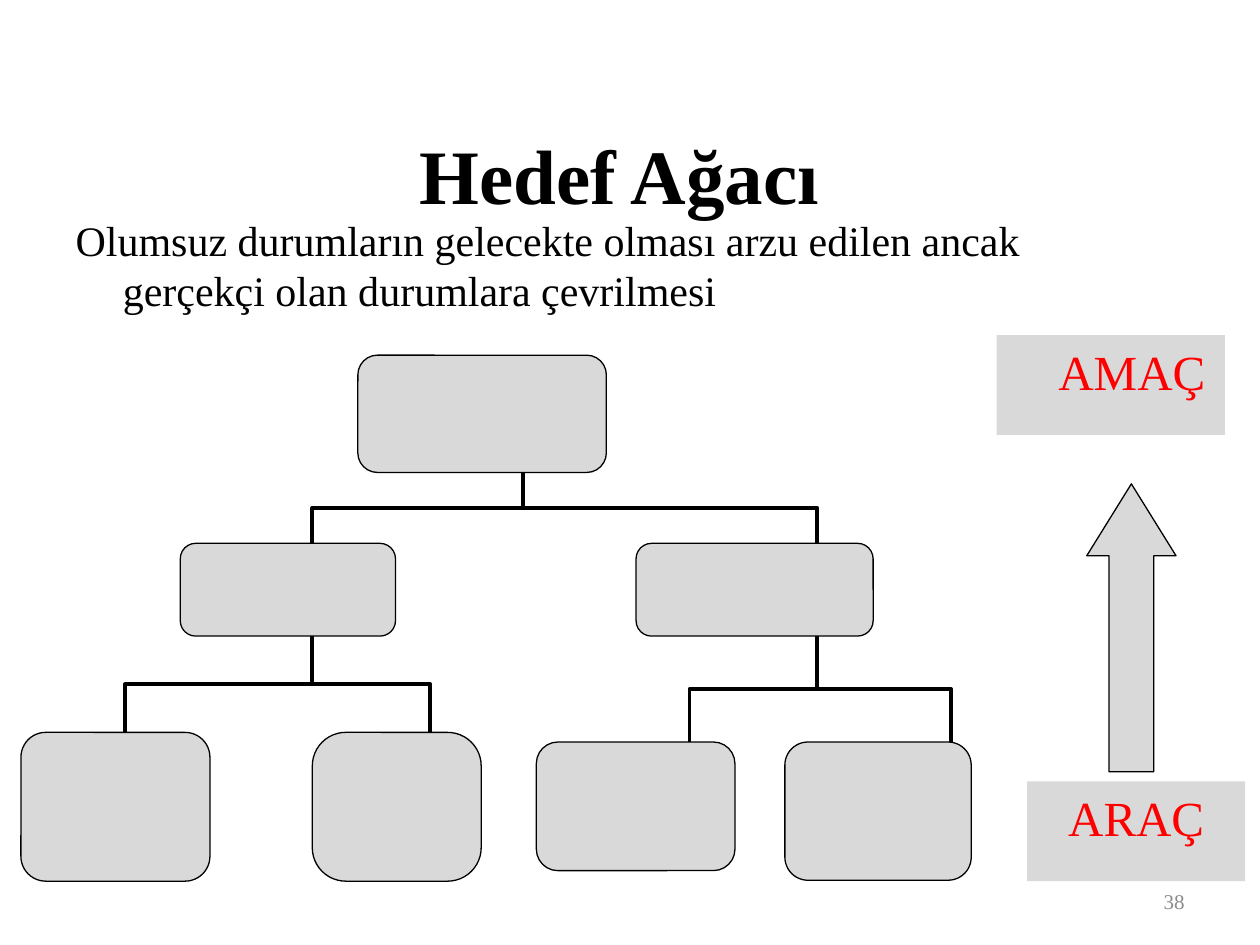
"""Build the goal tree slide with its means-to-end arrow."""
from dataclasses import dataclass

from lxml import etree
from pptx import Presentation
from pptx.dml.color import RGBColor
from pptx.enum.shapes import MSO_CONNECTOR, MSO_SHAPE
from pptx.enum.text import MSO_ANCHOR, PP_ALIGN
from pptx.oxml.ns import qn
from pptx.util import Pt

ROUNDED = MSO_SHAPE.ROUNDED_RECTANGLE
ALTERNATE = MSO_SHAPE.FLOWCHART_ALTERNATE_PROCESS
RECTANGLE = MSO_SHAPE.RECTANGLE
UP_ARROW = MSO_SHAPE.UP_ARROW
ELBOW = MSO_CONNECTOR.ELBOW
LEFT, CENTER, RIGHT = PP_ALIGN.LEFT, PP_ALIGN.CENTER, PP_ALIGN.RIGHT
TOP, MIDDLE = MSO_ANCHOR.TOP, MSO_ANCHOR.MIDDLE

BLACK = RGBColor(0x00, 0x00, 0x00)
RED = RGBColor(0xFF, 0x00, 0x00)
GRAY = RGBColor(0xD9, 0xD9, 0xD9)
NUMBER_GRAY = RGBColor(0x8C, 0x8C, 0x8C)
FONT = "Times New Roman"


@dataclass(frozen=True)
class Box:
    left: float
    top: float
    width: float
    height: float
    kind: MSO_SHAPE = ROUNDED
    adjustments: tuple[float, ...] = (0.167,)
    outlined: bool = True


@dataclass(frozen=True)
class Branch:
    parent_x: float
    parent_y: float
    child_y: float
    child_xs: tuple[float, float]


@dataclass(frozen=True)
class Label:
    text: str
    size: float
    color: RGBColor = BLACK
    alignment: PP_ALIGN = CENTER
    anchor: MSO_ANCHOR = TOP
    bold: bool = False
    space_before: float = 0
    margin: float = 0
    indent: float = 0


BRANCHES = (
    Branch(467, 363.5, 424, (543.5, 394)),
    Branch(178.5, 363.5, 418.5, (246, 71.5)),
    Branch(299, 270, 310.5, (467, 178.5)),
)
TREE_BOXES = (
    Box(204.5, 203, 142, 67),
    Box(103, 310.5, 123, 53, ALTERNATE, ()),
    Box(363.5, 310.5, 135.5, 53),
    Box(12, 418.5, 108, 85),
    Box(178.5, 418.5, 96.5, 85, adjustments=(0.225,)),
    Box(306.5, 424, 113.5, 73.5),
    Box(448.5, 424, 106.5, 79),
)
ARROW = Box(621, 276.5, 51, 164.5, UP_ARROW, (0.5, 0.806))
END_LABELS = (
    (Box(587, 446.5, 124.5, 57, RECTANGLE, (), False), Label("ARAÇ", 28, RED, space_before=3)),
    (Box(569.5, 191.5, 130.5, 57, RECTANGLE, (), False),
     Label("AMAÇ", 28, RED, space_before=7, margin=24)),
)


def place(shape, left: float, top: float, width: float, height: float) -> None:
    lengths = {"left": left, "top": top, "width": width, "height": height}
    for name, value in lengths.items():
        setattr(shape, name, Pt(value))


def write(shape, label: Label) -> None:
    frame = shape.text_frame
    frame.word_wrap = True
    frame.vertical_anchor = label.anchor
    paragraph = frame.paragraphs[0]
    paragraph.alignment = label.alignment
    paragraph.space_before = Pt(label.space_before)
    run = paragraph.add_run()
    run.text = label.text
    formats = {"name": FONT, "size": Pt(label.size), "bold": label.bold}
    for name, value in formats.items():
        setattr(run.font, name, value)
    run.font.color.rgb = label.color
    properties = paragraph._p.get_or_add_pPr()
    properties.set("marL", str(Pt(label.margin)))
    properties.set("indent", str(Pt(label.indent)))
    etree.SubElement(properties, qn("a:buNone"))


def draw_box(slide, box: Box):
    shape = slide.shapes.add_shape(
        box.kind, Pt(box.left), Pt(box.top), Pt(box.width), Pt(box.height))
    shape.shadow.inherit = False
    shape.fill.solid()
    shape.fill.fore_color.rgb = GRAY
    for index, value in enumerate(box.adjustments):
        shape.adjustments[index] = value
    if box.outlined:
        shape.line.color.rgb = BLACK
        shape.line.width = Pt(0.75)
    else:
        shape.line.fill.background()
    return shape


def draw_elbow(slide, branch: Branch, child_x: float) -> None:
    run = branch.child_y - branch.parent_y
    rise = abs(branch.parent_x - child_x)
    middle_x = (branch.parent_x + child_x) / 2
    middle_y = (branch.parent_y + branch.child_y) / 2
    side = 1 if child_x > branch.parent_x else -1
    connector = slide.shapes.add_connector(
        ELBOW,
        Pt(middle_x + side * run / 2), Pt(middle_y - rise / 2),
        Pt(middle_x - side * run / 2), Pt(middle_y + rise / 2))
    connector.line.color.rgb = BLACK
    connector.line.width = Pt(2.25)
    properties = connector._element.spPr
    quarter_turns = 1 if side > 0 else 3
    properties.find(qn("a:xfrm")).set("rot", str(quarter_turns * 90 * 60000))
    etree.SubElement(properties, qn("a:effectLst"))


def main() -> None:
    presentation = Presentation()
    presentation.slide_width, presentation.slide_height = Pt(720), Pt(540)
    slide = presentation.slides.add_slide(presentation.slide_layouts[1])

    title, body = slide.placeholders
    place(title, 30, 54, 648, 90)
    write(title, Label("Hedef Ağacı", 44, anchor=MIDDLE, bold=True))
    place(body, 36, 119, 589.5, 79)
    write(body, Label(
        "Olumsuz durumların gelecekte olması arzu edilen ancak gerçekçi olan durumlara çevrilmesi",
        24, alignment=LEFT, space_before=3, margin=27, indent=-27))

    for branch in BRANCHES:
        for child_x in branch.child_xs:
            draw_elbow(slide, branch, child_x)
    for box in TREE_BOXES:
        draw_box(slide, box)
    for box, label in END_LABELS:
        write(draw_box(slide, box), label)
    draw_box(slide, ARROW)

    number = slide.shapes.add_textbox(Pt(516), Pt(500.5), Pt(168), Pt(29))
    write(number, Label("38", 12, NUMBER_GRAY, RIGHT, MIDDLE))
    presentation.save("out.pptx")


if __name__ == "__main__":
    main()
